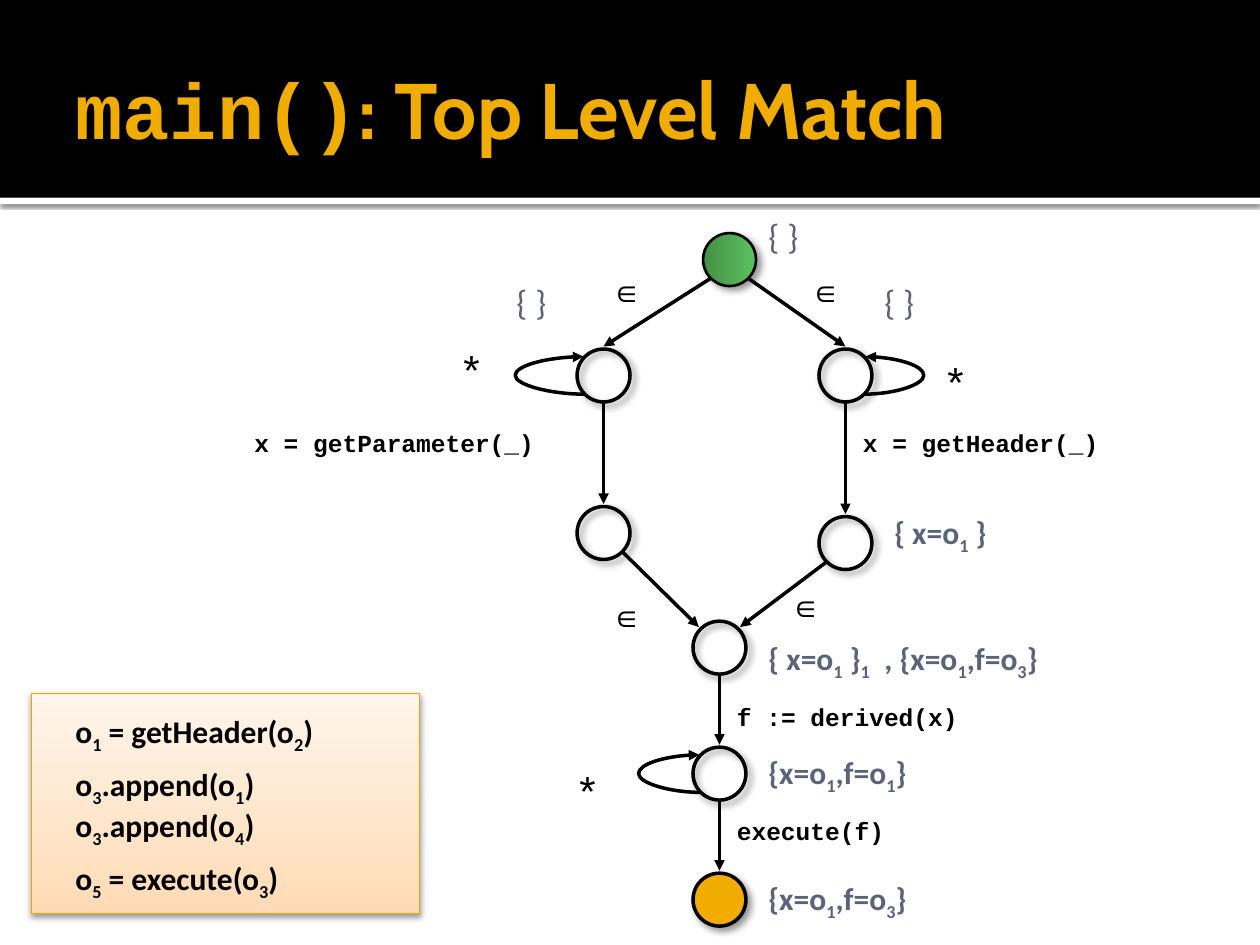
from dataclasses import dataclass

from lxml import etree
from pptx import Presentation
from pptx.dml.color import RGBColor
from pptx.enum import shapes, text
from pptx.oxml import ns
from pptx.util import Inches, Pt


@dataclass(frozen=True)
class Theme:
    """Colours, fonts and type sizes of the slide."""
    black: str = "000000"
    white: str = "FFFFFF"
    gold: str = "F0AD00"
    slate: str = "5A6378"
    green: tuple = ("438F45", "5CC35F")
    peach: tuple = ("FFDBB5", "FFF5EB")
    panel_edge: str = "EBA900"
    code: str = "Courier New"
    heading: str = "Cabin"
    body: str = "Calibri"
    symbol: str = "Arial"
    title_size: int = 45
    star_size: int = 24
    empty_size: int = 20
    body_size: int = 18
    code_size: int = 14


THEME = Theme()
DIAMETER = 0.42
DIAGONAL = 0.71
SIDES = {"top": (0, -1), "bottom": (0, 1),
         "upper left": (-DIAGONAL, -DIAGONAL), "upper right": (DIAGONAL, -DIAGONAL),
         "lower left": (-DIAGONAL, DIAGONAL), "lower right": (DIAGONAL, DIAGONAL)}
NODE_SHADOW = (40, 4, 3, 45)


def add_child(parent, tag, **attributes):
    """Append a drawing element with the given attributes."""
    return etree.SubElement(parent, ns.qn(tag), {key: str(value) for key, value in attributes.items()})


def write(slide, left, top, width, height, content, size=THEME.body_size, font=THEME.body,
          color=THEME.black, bold=False, other_font=None, wrap=True,
          anchor=text.MSO_ANCHOR.TOP):
    """Write text whose parts between tildes are subscript or in the other font."""
    box = slide.shapes.add_textbox(Inches(left), Inches(top), Inches(width), Inches(height))
    frame = box.text_frame
    frame.word_wrap = wrap
    frame.vertical_anchor = anchor
    for index, part in enumerate(content.split("~")):
        if not part:
            continue
        run = frame.paragraphs[0].add_run()
        run.text = part
        run.font.size = Pt(size)
        run.font.bold = bold
        run.font.color.rgb = RGBColor.from_string(color)
        run.font.name = other_font if index % 2 and other_font else font
        if index % 2 and not other_font:
            run.font._element.set("baseline", "-25000")


def add_block(slide, kind, left, top, width, height, fill=None, angle=0,
              line=None, weight=1, shadow=None):
    """Add a shape with a plain, two-colour or empty fill and an optional shadow."""
    block = slide.shapes.add_shape(kind, Inches(left), Inches(top), Inches(width), Inches(height))
    block.shadow.inherit = False
    if fill is None:
        block.fill.background()
    elif isinstance(fill, tuple):
        block.fill.gradient()
        block.fill.gradient_angle = angle
        for stop, color, position in zip(block.fill.gradient_stops, fill, (0, 1)):
            stop.color.rgb = RGBColor.from_string(color)
            stop.position = position
    else:
        block.fill.solid()
        block.fill.fore_color.rgb = RGBColor.from_string(fill)
    if line:
        block.line.color.rgb = RGBColor.from_string(line)
        block.line.width = Pt(weight)
    else:
        block.line.fill.background()
    if shadow:
        opacity, blur, distance, direction = shadow
        effects = block._element.spPr.find(ns.qn("a:effectLst"))
        outer = add_child(effects, "a:outerShdw", blurRad=Pt(blur), dist=Pt(distance),
                          dir=direction * 60000, rotWithShape=0)
        tint = add_child(outer, "a:srgbClr", val=THEME.black)
        add_child(tint, "a:alpha", val=opacity * 1000)
    return block


def add_arrow(slide, start, end, reach=None):
    """Draw a straight arrow, or a curved one that bulges out by the reach."""
    kind = shapes.MSO_CONNECTOR.CURVE if reach else shapes.MSO_CONNECTOR.STRAIGHT
    arrow = slide.shapes.add_connector(kind, *(Inches(value) for value in (*start, *end)))
    arrow.line.color.rgb = RGBColor.from_string(THEME.black)
    arrow.line.width = Pt(2)
    properties = arrow._element.spPr
    add_child(properties.find(ns.qn("a:ln")), "a:tailEnd", type="triangle")
    add_child(properties, "a:effectLst")
    if reach:
        adjustments = properties.find(ns.qn("a:prstGeom")).find(ns.qn("a:avLst"))
        ratio = round(reach / abs(end[0] - start[0]) * 100000)
        add_child(adjustments, "a:gd", name="adj1", fmla=f"val {ratio}")


def rim(center, side, gap=0):
    """Return the point on a node's rim at the named side."""
    radius = DIAMETER / 2 + gap
    return tuple(middle + radius * step for middle, step in zip(center, SIDES[side]))


def add_header(slide, left, top, width, height):
    """Place the black title band with its white rule."""
    rectangle = shapes.MSO_SHAPE.RECTANGLE
    add_block(slide, rectangle, left, top + height, width, 0.05, THEME.white,
              shadow=(60, 2.5, 0.8, 90))
    add_block(slide, rectangle, left, top, width, height, THEME.black)
    write(slide, left + 0.5, top + 0.17, width - 1, 1.37, "main()~: Top Level Match",
          size=THEME.title_size, font=THEME.code, other_font=THEME.heading,
          color=THEME.gold, bold=True, anchor=text.MSO_ANCHOR.MIDDLE)


def add_trace(slide, left, top, width, height):
    """Place the panel that lists the traced calls."""
    add_block(slide, shapes.MSO_SHAPE.RECTANGLE, left, top, width, height, THEME.peach, 90,
              THEME.panel_edge, 0.5, (38, 3.5, 2, 90))
    calls = [(0.1, 2.83, "o~1~ = getHeader(o~2~)"), (0.52, 1.66, "o~3~.append(o~1~)"),
             (0.85, 1.66, "o~3~.append(o~4~)"), (1.27, 1.85, "o~5~ = execute(o~3~)")]
    for offset, extent, call in calls:
        write(slide, left + 0.25, top + offset, extent, 0.4, call, bold=True, wrap=extent > 2)


def add_automaton(slide, left, top):
    """Place the states, transitions and labels of the matching automaton."""
    offsets = {"start": (3.79, 0.56), "parameter": (2.79, 1.48), "header": (4.71, 1.48),
               "parameter read": (2.79, 2.73), "header read": (4.71, 2.81),
               "joined": (3.71, 3.64), "derived": (3.71, 4.64), "executed": (3.71, 5.64)}
    fills = {"start": THEME.green, "executed": THEME.gold}
    states = {name: (left + x, top + y) for name, (x, y) in offsets.items()}
    for name, (x, y) in states.items():
        add_block(slide, shapes.MSO_SHAPE.OVAL, x - DIAMETER / 2, y - DIAMETER / 2,
                  DIAMETER, DIAMETER, fills.get(name), 0, THEME.black,
                  1.5 if name == "start" else 2, NODE_SHADOW)

    transitions = [("start", "lower right", "header", "top"),
                   ("start", "lower left", "parameter", "top"),
                   ("parameter", "bottom", "parameter read", "top"),
                   ("header", "bottom", "header read", "top"),
                   ("parameter read", "lower right", "joined", "upper left"),
                   ("header read", "lower left", "joined", "upper right"),
                   ("joined", "bottom", "derived", "top"),
                   ("derived", "bottom", "executed", "top")]
    for source, leaving, target, entering in transitions:
        add_arrow(slide, rim(states[source], leaving), rim(states[target], entering, 0.02))

    loops = [("header", "right", 0.48), ("parameter", "left", 0.56), ("derived", "left", 0.5)]
    for name, side, reach in loops:
        x, y = rim(states[name], f"upper {side}")
        step = 0.01 if side == "right" else -0.01
        add_arrow(slide, rim(states[name], f"lower {side}"), (x + step, y), reach)

    member = dict(size=THEME.body_size, font=THEME.symbol)
    star = dict(size=THEME.star_size, font=THEME.symbol)
    call = dict(size=THEME.code_size, font=THEME.code, bold=True)
    empty = dict(size=THEME.empty_size, color=THEME.slate)
    binding = dict(color=THEME.slate, bold=True)
    label_groups = [
        (member, 0.4, [(4.33, 0.6, 0.58, "∈"), (2.75, 0.6, 0.42, "∈"),
                       (2.75, 3.18, 0.5, "∈"), (4.17, 3.1, 0.5, "∈")]),
        (star, 0.5, [(2.5, 4.52, 0.5, "*"), (1.58, 1.18, 0.5, "*"), (5.42, 1.27, 0.5, "*")]),
        (call, 0.34, [(-0.08, 1.85, 3.25, "x = getParameter(_)"),
                      (4.75, 1.85, 3, "x = getHeader(_)"),
                      (3.75, 4.02, 2.25, "f := derived(x)"), (3.75, 4.93, 2, "execute(f)")]),
        (empty, 0.44, [(4, 0.15, 0.58, "{ }"), (2, 0.68, 0.58, "{ }"), (4.92, 0.68, 0.58, "{ }")]),
        (binding, 0.4, [(5, 2.52, 1.33, "{ x=o~1~ }"), (4, 3.52, 1.58, "{ x=o~1~ }~1~"),
                        (4.92, 3.52, 2.08, ", {x=o~1~,f=o~3~}"),
                        (4, 4.43, 1.83, "{x=o~1~,f=o~1~}"), (4, 5.43, 1.83, "{x=o~1~,f=o~3~}")])]
    for style, height, labels in label_groups:
        for x, y, width, content in labels:
            write(slide, left + x, top + y, width, height, content, **style)


def main():
    """Build and save the slide."""
    deck = Presentation()
    deck.slide_width, deck.slide_height = Inches(10), Inches(7.5)
    slide = deck.slides.add_slide(deck.slide_layouts[6])
    add_header(slide, 0, 0, 10, 1.57)
    add_trace(slide, 0.25, 5.5, 3.08, 1.75)
    add_automaton(slide, 2, 1.5)
    deck.save("out.pptx")


if __name__ == "__main__":
    main()
